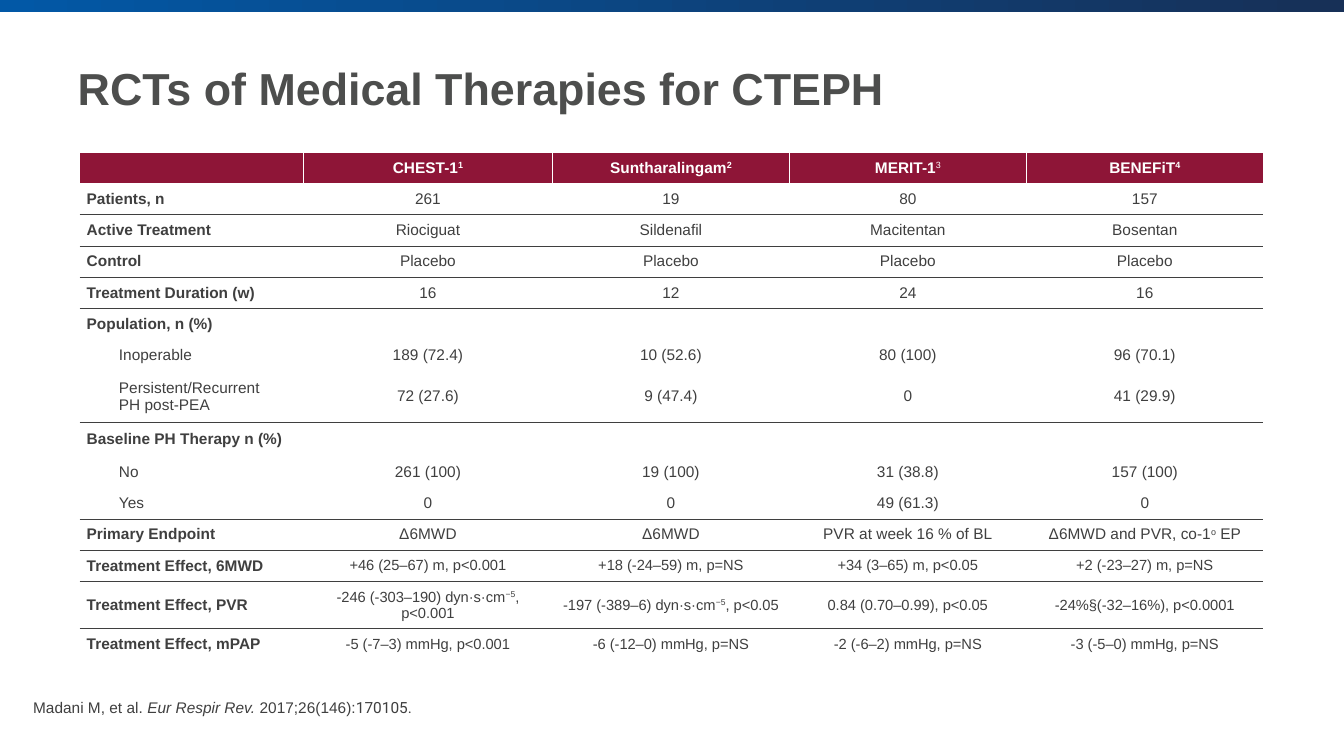
from dataclasses import dataclass

from lxml.etree import SubElement
from pptx import Presentation
from pptx.dml.color import RGBColor
from pptx.enum.shapes import MSO_SHAPE
from pptx.enum.text import MSO_ANCHOR, MSO_AUTO_SIZE, PP_ALIGN
from pptx.oxml.ns import qn
from pptx.util import Inches, Pt

COLORS = {
    "band_start": "0258A6",
    "band_end": "173057",
    "title": "4D4E4D",
    "text": "3F3F3F",
    "header": "8E1537",
    "white": "FFFFFF",
}
FONT = "Arial"
COLUMN_WIDTHS = (2.22, 2.47, 2.35, 2.35, 2.35)


@dataclass(frozen=True)
class TrialRow:
    label: str
    values: tuple = ("",) * 4
    height: float = 0.31
    ruled: bool = True
    indented: bool = False
    value_size: float = 11
    header: bool = False


@dataclass(frozen=True)
class Border:
    color: str
    width: float


HEADER_BORDER = Border("white", 1)
RULE = Border("text", 0.5)

ROWS = (
    TrialRow("", ("CHEST-1^1", "Suntharalingam^2", "MERIT-1^3", "BENEFiT^4"), ruled=False, header=True),
    TrialRow("Patients, n", ("261", "19", "80", "157")),
    TrialRow("Active Treatment", ("Riociguat", "Sildenafil", "Macitentan", "Bosentan")),
    TrialRow("Control", ("Placebo",) * 4),
    TrialRow("Treatment Duration (w)", ("16", "12", "24", "16")),
    TrialRow("Population, n (%)", ruled=False),
    TrialRow("Inoperable", ("189 (72.4)", "10 (52.6)", "80 (100)", "96 (70.1)"), ruled=False, indented=True),
    TrialRow("Persistent/Recurrent\nPH post-PEA", ("72 (27.6)", "9 (47.4)", "0", "41 (29.9)"),
             height=0.51, indented=True),
    TrialRow("Baseline PH Therapy n (%)", height=0.34, ruled=False),
    TrialRow("No", ("261 (100)", "19 (100)", "31 (38.8)", "157 (100)"), ruled=False, indented=True),
    TrialRow("Yes", ("0", "0", "49 (61.3)", "0"), indented=True),
    TrialRow("Primary Endpoint", ("Δ6MWD", "Δ6MWD", "PVR at week 16 % of BL", "Δ6MWD and PVR, co-1^o^ EP")),
    TrialRow("Treatment Effect, 6MWD",
             ("+46 (25–67) m, p<0.001", "+18 (-24–59) m, p=NS", "+34 (3–65) m, p<0.05", "+2 (-23–27) m, p=NS"),
             value_size=10.5),
    TrialRow("Treatment Effect, PVR",
             ("-246 (-303–190) dyn·s·cm^−5^, p<0.001", "-197 (-389–6) dyn·s·cm^−5^, p<0.05",
              "0.84 (0.70–0.99), p<0.05", "-24%§(-32–16%), p<0.0001"),
             height=0.47, value_size=10.5),
    TrialRow("Treatment Effect, mPAP",
             ("-5 (-7–3) mmHg, p<0.001", "-6 (-12–0) mmHg, p=NS", "-2 (-6–2) mmHg, p=NS", "-3 (-5–0) mmHg, p=NS"),
             ruled=False, value_size=10.5),
)


def rgb(name: str) -> RGBColor:
    return RGBColor.from_string(COLORS[name])


def add_run(paragraph, text: str, size: float, color: str, bold: bool = False,
            italic: bool = False, font: str = FONT):
    run = paragraph.add_run()
    run.text = text
    run.font.name = font
    run.font.size = Pt(size)
    run.font.bold = bold
    run.font.italic = italic
    run.font.color.rgb = rgb(color)
    return run


def set_border(cell, side: str, border: Border | None) -> None:
    properties = cell._tc.get_or_add_tcPr()
    line = SubElement(properties, qn(f"a:ln{side}"))
    if border is None:
        SubElement(line, qn("a:noFill"))
        return
    line.set("w", str(Pt(border.width)))
    fill = SubElement(line, qn("a:solidFill"))
    SubElement(fill, qn("a:srgbClr"), val=COLORS[border.color])


def fill_cell(cell, row: TrialRow, text: str, is_label: bool) -> None:
    cell.vertical_anchor = MSO_ANCHOR.MIDDLE
    cell.margin_left = cell.margin_right = Inches(0.07)
    cell.margin_top = cell.margin_bottom = Inches(0.04)
    size = 11 if is_label else row.value_size
    color = "white" if row.header else "text"
    bold = row.header or (is_label and not row.indented)
    frame = cell.text_frame
    for index, line in enumerate(text.split("\n")):
        paragraph = frame.add_paragraph() if index else frame.paragraphs[0]
        paragraph.alignment = PP_ALIGN.LEFT if is_label else PP_ALIGN.CENTER
        if is_label and row.indented:
            paragraph._p.get_or_add_pPr().set("marL", str(Inches(0.32)))
        if not line:
            SubElement(paragraph._p, qn("a:endParaRPr"), sz=str(Pt(size).centipoints))
            continue
        for position, part in enumerate(line.split("^")):
            run = add_run(paragraph, part, size, color, bold)
            if position % 2:
                run.font._element.set("baseline", "30000")


def add_trial_table(slide) -> None:
    height = sum(row.height for row in ROWS)
    frame = slide.shapes.add_table(len(ROWS), len(COLUMN_WIDTHS), Inches(0.79), Inches(1.51),
                                   Inches(sum(COLUMN_WIDTHS)), Inches(height))
    table = frame.table
    table.horz_banding = False
    for column, width in zip(table.columns, COLUMN_WIDTHS):
        column.width = Inches(width)
    for row_index, row in enumerate(ROWS):
        table.rows[row_index].height = Inches(row.height)
        side = HEADER_BORDER if row.header else None
        ruled_above = row_index > 0 and ROWS[row_index - 1].ruled
        top = RULE if ruled_above else side
        bottom = RULE if row.ruled else None
        for column_index, text in enumerate((row.label, *row.values)):
            cell = table.cell(row_index, column_index)
            fill_cell(cell, row, text, column_index == 0)
            for edge, border in (("L", side), ("R", side), ("T", top), ("B", bottom)):
                set_border(cell, edge, border)
            if row.header:
                cell.fill.solid()
                cell.fill.fore_color.rgb = rgb("header")
            else:
                cell.fill.background()
    merit_reference = table.cell(0, 3).text_frame.paragraphs[0].runs[1]
    merit_reference.font.bold = False


def add_band(slide) -> None:
    band = slide.shapes.add_shape(MSO_SHAPE.RECTANGLE, 0, 0, Inches(13.33), Inches(0.12))
    band.shadow.inherit = False
    band.line.fill.background()
    band.fill.gradient()
    band.fill.gradient_angle = 0
    for stop, color in zip(band.fill.gradient_stops, ("band_start", "band_end")):
        stop.color.rgb = rgb(color)


def add_title(slide) -> None:
    title = slide.shapes.title
    title.left, title.top = Inches(0.67), Inches(0.22)
    title.width, title.height = Inches(11.75), Inches(1.3)
    frame = title.text_frame
    frame.auto_size = MSO_AUTO_SIZE.NONE
    frame.vertical_anchor = MSO_ANCHOR.MIDDLE
    paragraph = frame.paragraphs[0]
    paragraph.alignment = PP_ALIGN.LEFT
    add_run(paragraph, "RCTs of Medical Therapies for CTEPH", 32, "title", bold=True)


def add_citation(slide) -> None:
    box = slide.shapes.add_textbox(Inches(0.23), Inches(6.88), Inches(10.12), Inches(0.29))
    frame = box.text_frame
    frame.word_wrap = True
    frame.auto_size = MSO_AUTO_SIZE.SHAPE_TO_FIT_TEXT
    paragraph = frame.paragraphs[0]
    add_run(paragraph, "Madani M, et al. ", 11, "text")
    add_run(paragraph, "Eur Respir Rev. ", 11, "text", italic=True)
    add_run(paragraph, "2017;26(146):", 11, "text")
    add_run(paragraph, "170105.", 11, "text", font="Roboto")


def main() -> None:
    presentation = Presentation()
    presentation.slide_width, presentation.slide_height = Inches(13.33), Inches(7.5)
    slide = presentation.slides.add_slide(presentation.slide_layouts[5])
    add_band(slide)
    add_title(slide)
    add_trial_table(slide)
    add_citation(slide)
    presentation.save("out.pptx")


if __name__ == "__main__":
    main()
